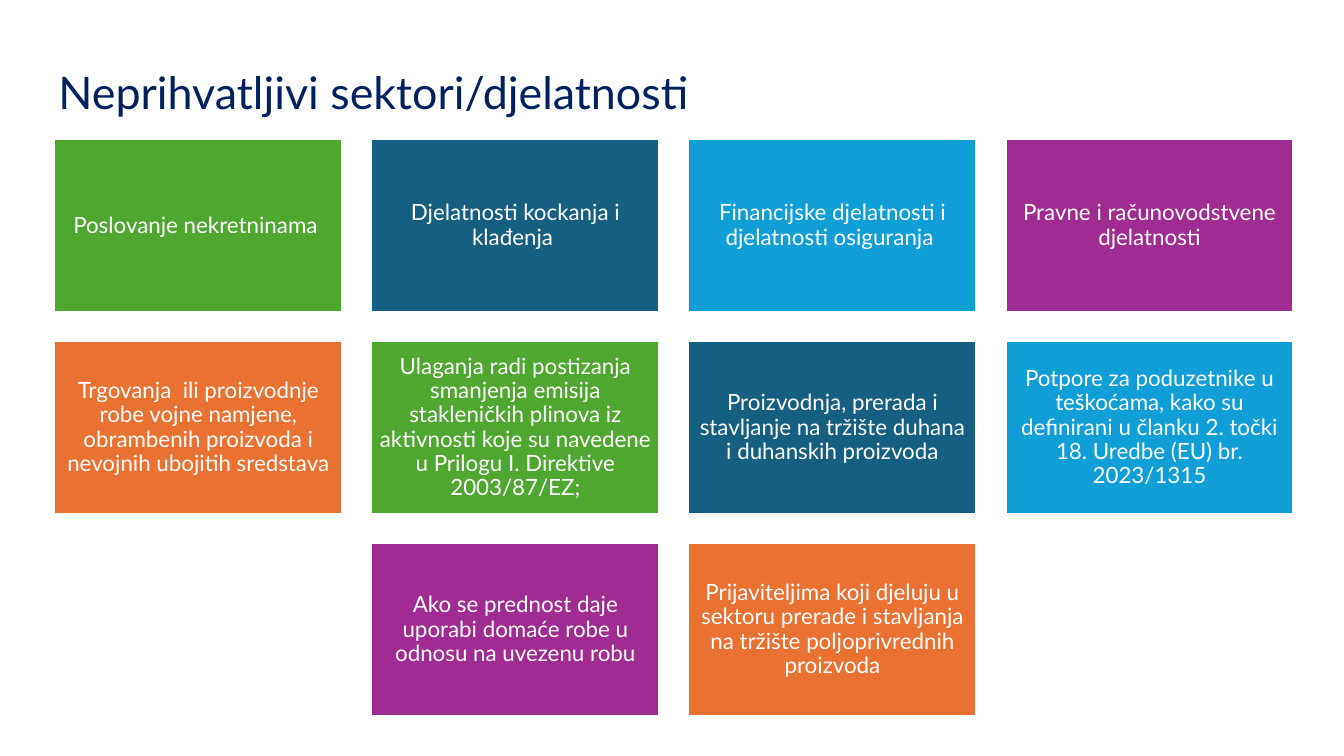
"""Builds a slide with a grid of coloured boxes listing ineligible sectors."""
from pptx import Presentation
from pptx.dml.color import RGBColor
from pptx.enum.shapes import MSO_SHAPE
from pptx.enum.text import MSO_ANCHOR, MSO_AUTO_SIZE, PP_ALIGN
from pptx.util import Cm, Pt

RECT = MSO_SHAPE.RECTANGLE
MIDDLE = MSO_ANCHOR.MIDDLE
NO_FIT = MSO_AUTO_SIZE.NONE
LEFT, CENTER = PP_ALIGN.LEFT, PP_ALIGN.CENTER

COLORS = ["4EA72E", "156082", "0F9ED5", "A02B93", "E97132"]
ROWS = [
    ["Poslovanje nekretninama ",
     "Djelatnosti kockanja i klađenja ",
     "Financijske djelatnosti i djelatnosti osiguranja ",
     "Pravne i računovodstvene djelatnosti"],
    ["Trgovanja  ili proizvodnje robe vojne namjene, obrambenih proizvoda "
     "i nevojnih ubojitih sredstava",
     "Ulaganja radi postizanja smanjenja emisija stakleničkih plinova iz "
     "aktivnosti koje su navedene u Prilogu I. Direktive 2003/87/EZ;",
     "Proizvodnja, prerada i stavljanje na tržište duhana i duhanskih proizvoda",
     "Potpore za poduzetnike u teškoćama, kako su definirani u članku 2. "
     "točki 18. Uredbe (EU) br. 2023/1315"],
    ["Ako se prednost daje uporabi domaće robe u odnosu na uvezenu robu",
     "Prijaviteljima koji djeluju u sektoru prerade i stavljanja na tržište "
     "poljoprivrednih proizvoda"],
]
COLS = 4
GRID_LEFT, GRID_TOP = 1.37, 3.51
BOX_W, BOX_H = 7.26, 4.36
STEP_X, STEP_Y = 7.99, 5.09


def rgb(value):
    return RGBColor.from_string(value)


def write(sp, text, size, color, align, inset_x, inset_y):
    tf = sp.text_frame
    frame = {"word_wrap": True, "auto_size": NO_FIT, "vertical_anchor": MIDDLE,
             "margin_left": inset_x, "margin_right": inset_x,
             "margin_top": inset_y, "margin_bottom": inset_y}
    for name, value in frame.items():
        setattr(tf, name, value)
    p = tf.paragraphs[0]
    p.alignment = align
    p.line_spacing = 0.9
    r = p.add_run()
    r.text = text
    for name, value in {"name": "Lato", "size": Pt(size)}.items():
        setattr(r.font, name, value)
    r.font.color.rgb = rgb(color)


prs = Presentation()
prs.slide_width, prs.slide_height = Cm(33.87), Cm(19.05)
s = prs.slides.add_slide(prs.slide_layouts[5])

title = s.shapes.title
place = {"left": 1.22, "top": 0.99, "width": 25.7, "height": 2.82}
for name, value in place.items():
    setattr(title, name, Cm(value))
write(title, "Neprihvatljivi sektori/djelatnosti", 32, "002060", LEFT,
      Cm(0.25), Cm(0.13))

count = 0
for row, texts in enumerate(ROWS):
    first_col = (COLS - len(texts)) / 2
    for col, text in enumerate(texts):
        sp = s.shapes.add_shape(
            RECT, Cm(GRID_LEFT + (first_col + col) * STEP_X),
            Cm(GRID_TOP + row * STEP_Y), Cm(BOX_W), Cm(BOX_H))
        sp.shadow.inherit = False
        sp.fill.solid()
        sp.fill.fore_color.rgb = rgb(COLORS[count % len(COLORS)])
        sp.line.color.rgb = rgb("FFFFFF")
        sp.line.width = Pt(1.5)
        write(sp, text, 16, "FFFFFF", CENTER, Cm(0.17), Cm(0.17))
        count += 1

prs.save("out.pptx")
